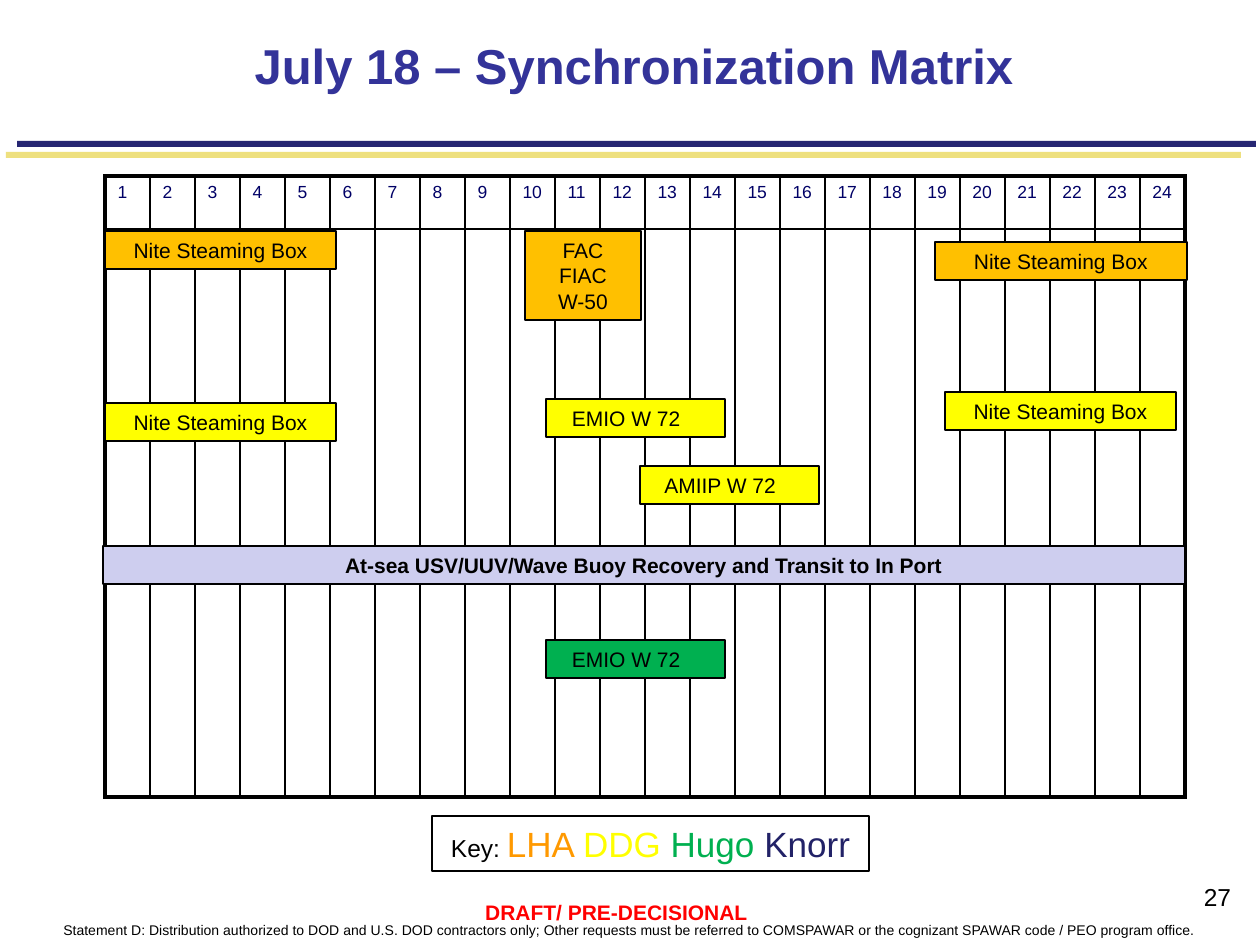
from dataclasses import dataclass
from lxml.etree import SubElement
from pptx import Presentation
from pptx.dml.color import RGBColor
from pptx.enum.shapes import MSO_SHAPE
from pptx.enum.text import MSO_ANCHOR, MSO_AUTO_SIZE, PP_ALIGN
from pptx.oxml.ns import qn
from pptx.util import Pt

PX = 914400 / 126  # EMU in one pixel


@dataclass(frozen=True)
class Theme:
    face: str = "Arial"
    black: str = "000000"
    white: str = "FFFFFF"
    title: str = "333399"
    hour: str = "000066"
    navy: str = "262673"
    gold: str = "EEE07F"
    draft: str = "FF0000"
    amber: str = "FFC000"
    orange: str = "FF9900"
    yellow: str = "FFFF00"
    green: str = "00B050"
    lilac: str = "CECEEF"
    ink: str = "222267"
    head: int = 28
    key: int = 20
    mid: int = 14
    body: int = 12
    small: int = 10
    note: int = 8
    thick: float = 2.25
    edge: float = 1.5
    thin: float = 1
    hair: float = 0.75


T = Theme()


def emu(*vals):
    return [round(v * PX) for v in vals]


def put(obj, **attrs):
    for name, val in attrs.items():
        setattr(obj, name, val)


def add_run(para, text, size, color=T.black, bold=False):
    run = para.add_run()
    run.text = text
    put(run.font, name=T.face, size=Pt(size), bold=bold)
    run.font.color.rgb = RGBColor.from_string(color)


def write(frame, lines, align=PP_ALIGN.CENTER, anchor=MSO_ANCHOR.TOP, wrap=True):
    """Each line is a list of (text, size, color, bold) runs."""
    put(frame, word_wrap=wrap, vertical_anchor=anchor,
        auto_size=MSO_AUTO_SIZE.NONE)
    for i, runs in enumerate(lines):
        para = frame.add_paragraph() if i else frame.paragraphs[0]
        para.alignment = align
        for run in runs:
            add_run(para, *run)


def add_rect(slide, box, fill, line=None):
    rect = slide.shapes.add_shape(MSO_SHAPE.RECTANGLE, *emu(*box))
    rect.shadow.inherit = False
    rect.fill.solid()
    rect.fill.fore_color.rgb = RGBColor.from_string(fill)
    if line:
        rect.line.width = Pt(line)
        rect.line.color.rgb = RGBColor.from_string(T.black)
    else:
        rect.line.fill.background()
    return rect


def add_head(slide, box):
    """Title with the two rules below it."""
    x, y, w, h = box
    title = slide.shapes.title
    left, top, width, height = emu(x + 242, y + 31, w - 242, 68)
    put(title, left=left, top=top, width=width, height=height)
    write(title.text_frame,
          [[("July 18 – Synchronization Matrix", T.head, T.title, True)]],
          PP_ALIGN.LEFT, MSO_ANCHOR.MIDDLE)
    add_rect(slide, (x + 6, y + 152, 1235, 6), T.gold)
    add_rect(slide, (x + 17, y + 141, 1239, 6), T.navy)


def add_edge(cell, side, width):
    props = cell._tc.get_or_add_tcPr()
    line = SubElement(props, qn("a:" + side), w=str(Pt(width)))
    fill = SubElement(line, qn("a:solidFill"))
    SubElement(fill, qn("a:srgbClr"), val=T.black)


def add_grid(slide, box, hours=24, top=53):
    """Table of hours, with a heavy outer frame."""
    x, y, w, h = box
    table = slide.shapes.add_table(2, hours, *emu(*box)).table
    put(table, first_row=False, horz_banding=False)
    for row, high in zip(table.rows, (top, h - top)):
        row.height = emu(high)[0]
    for c, col in enumerate(table.columns):
        col.width = emu(w / hours)[0]
        for r in range(2):
            cell = table.cell(r, c)
            outer = {"lnL": c == 0, "lnR": c == hours - 1,
                     "lnT": r == 0, "lnB": r == 1}
            for side, heavy in outer.items():
                add_edge(cell, side, T.thick if heavy else T.thin)
            cell.fill.background()
            cell.margin_right = emu(5)[0]
        add_run(table.cell(0, c).text_frame.paragraphs[0],
                str(c + 1), T.small, T.hour)


def add_bars(slide, box):
    """Activities laid over the hours; offsets are from the grid corner."""
    x, y, w, h = box
    night, emio, amiip = "Nite Steaming Box", "EMIO W 72", "AMIIP W 72"
    sea = "At-sea USV/UUV/Wave Buoy Recovery and Transit to In Port"
    bars = [
        (0, 55, 231, T.amber, [night]),
        (830, 66, 252, T.amber, [night]),
        (0, 227, 231, T.yellow, [night]),
        (840, 216, 231, T.yellow, [night]),
        (441, 464, 179, T.green, [emio]),
        (420, 55, 116, T.amber, ["FAC FIAC", "W-50"]),
        (441, 223, 179, T.yellow, [emio]),
        (535, 290, 179, T.yellow, [amiip]),
        (-2, 370, w + 2, T.lilac, [sea]),
    ]
    for dx, dy, wide, fill, lines in bars:
        high = 89 if len(lines) > 1 else 38
        bar = add_rect(slide, (x + dx, y + dy, wide, high), fill, T.edge)
        frame = bar.text_frame
        write(frame, [[(text, T.body, T.black, text == sea)] for text in lines],
              anchor=MSO_ANCHOR.MIDDLE)
        if lines[0] in (emio, amiip):
            frame.margin_right = emu(31)[0]


def add_key(slide, box):
    """Color key of the ships."""
    rect = add_rect(slide, box, T.white, T.hair)
    write(rect.text_frame, [[
        ("Key: ", T.mid),
        ("LHA ", T.key, T.orange),
        ("DDG", T.key, T.yellow),
        (" Hugo ", T.key, T.green),
        ("Knorr", T.key, T.ink),
    ]], anchor=MSO_ANCHOR.MIDDLE, wrap=False)


def add_foot(slide, box):
    """Page number, draft mark and distribution statement."""
    x, y, w, h = box
    note = ("Statement D: Distribution authorized to DOD and U.S. DOD "
            "contractors only; Other requests must be referred to COMSPAWAR "
            "or the cognizant SPAWAR code / PEO program office.")
    parts = [
        ((x, y + 39, w, 29), (note, T.note)),
        ((x + 1174, y, 87, 63), ("27", T.mid)),
        ((x + 471, y + 17, 291, 38),
         ("DRAFT/ PRE-DECISIONAL", T.body, T.draft, True)),
    ]
    for place, run in parts:
        text = slide.shapes.add_textbox(*emu(*place))
        write(text.text_frame, [[run]])


def main():
    prs = Presentation()
    prs.slide_width, prs.slide_height = emu(1260, 945)
    slide = prs.slides.add_slide(prs.slide_layouts[5])
    grid = (105, 176, 1080, 621)
    add_foot(slide, (0, 876, 1260, 69))
    add_head(slide, (0, 0, 1260, 160))
    add_key(slide, (432, 816, 437, 55))
    add_grid(slide, grid)
    add_bars(slide, grid)
    prs.save("out.pptx")


if __name__ == "__main__":
    main()
